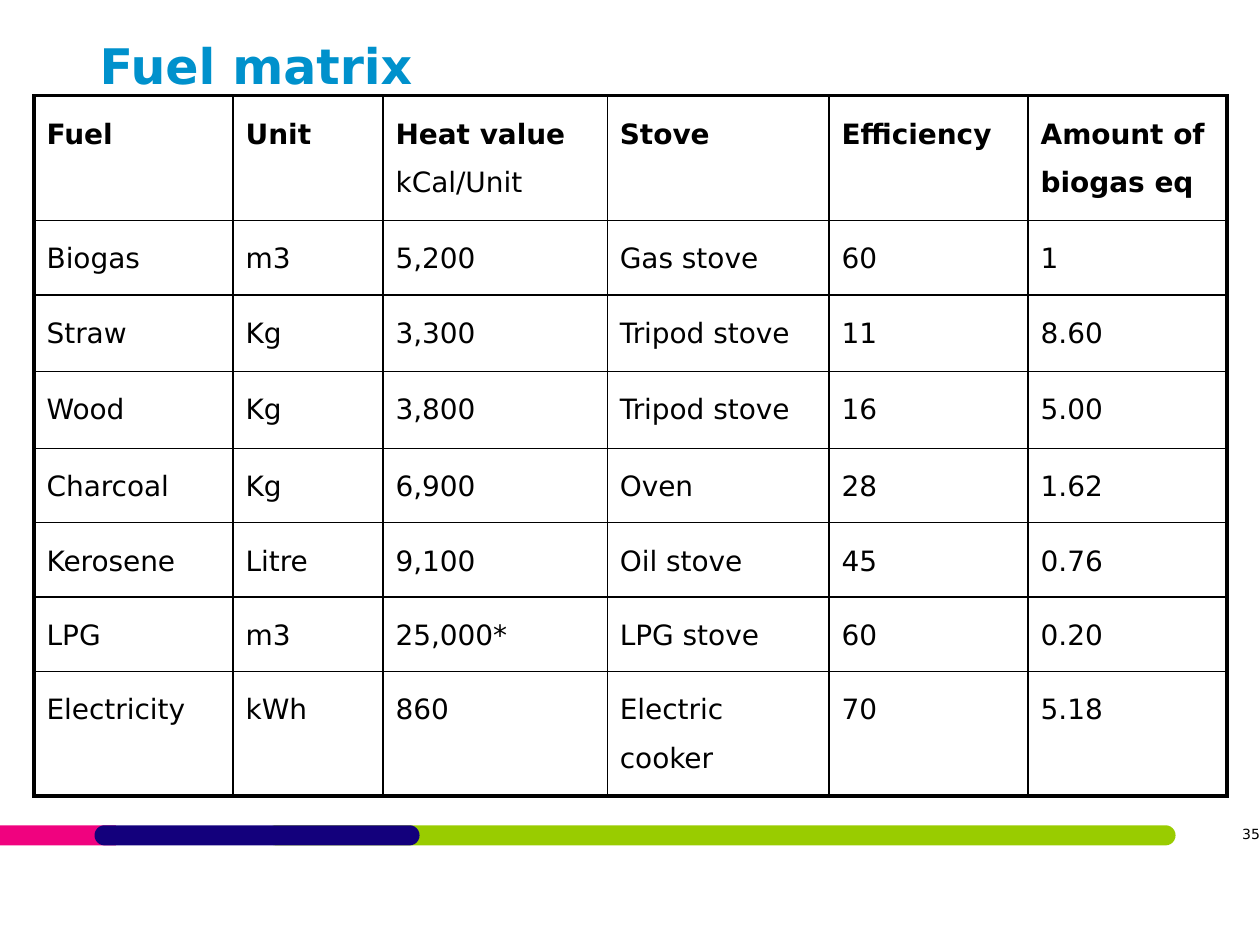
from lxml import etree
from pptx import Presentation, util as u
from pptx.dml.color import RGBColor
from pptx.enum import shapes, text
from pptx.oxml.ns import qn

HEAD = ["Fuel", "Unit", "Heat value |kCal/Unit", "Stove", "Efficiency",
        "Amount of biogas eq"]
FUELS = [
    ["Biogas", "m3", "5,200", "Gas stove", "60", "1"],
    ["Straw", "Kg", "3,300", "Tripod stove", "11", "8.60"],
    ["Wood", "Kg", "3,800", "Tripod stove", "16", "5.00"],
    ["Charcoal", "Kg", "6,900", "Oven", "28", "1.62"],
    ["Kerosene", "Litre", "9,100", "Oil stove", "45", "0.76"],
    ["LPG", "m3", "25,000*", "LPG stove", "60", "0.20"],
    ["Electricity", "kWh", "860", "Electric cooker", "70", "5.18"],
]
WIDTHS = [1.58, 1.19, 1.78, 1.76, 1.58, 1.58]
HEIGHTS = [0.99, 0.59, 0.61, 0.61, 0.59, 0.59, 0.59, 0.99]
BARS = [  # left, width, rounding, colour
    (2.11, 7.22, 0.5, "99CC00"),
    (0, 0.92, 0, "F0027F"),
    (0.75, 2.58, 0.5, "13007C"),
]


def color(code):
    return RGBColor.from_string(code)


def apply(item, vals):
    for key, val in vals.items():
        setattr(item, key, val)


def box(*sides):
    return [u.Inches(side) for side in sides]


def edge(cell, side, width):
    """Draw one black cell border; side is L, R, T or B."""
    line = etree.SubElement(cell._tc.get_or_add_tcPr(), qn(f"a:ln{side}"),
                            w=str(u.Pt(width)))
    fill = etree.SubElement(line, qn("a:solidFill"))
    etree.SubElement(fill, qn("a:srgbClr"), val="000000")


class Deck:
    font = "DejaVu Sans"
    ink = "000000"
    flush = dict.fromkeys(("margin_left", "margin_top", "margin_right",
                           "margin_bottom"), 0)

    def __init__(self, wide, high):
        self.prs = Presentation()
        apply(self.prs, {"slide_width": u.Inches(wide),
                         "slide_height": u.Inches(high)})
        self.slide = self.prs.slides.add_slide(self.prs.slide_layouts[5])

    def run(self, para, words, size, bold=False, ink=ink):
        run = para.add_run()
        run.text = words
        apply(run.font, {"name": self.font, "size": u.Pt(size), "bold": bold})
        run.font.color.rgb = color(ink)

    def bar(self, left, top, width, height, curve, fill):
        bar = self.slide.shapes.add_shape(
            shapes.MSO_SHAPE.ROUNDED_RECTANGLE,
            *box(left, top, width, height))
        bar.adjustments[0] = curve
        bar.shadow.inherit = False
        bar.fill.solid()
        bar.fill.fore_color.rgb = color(fill)
        bar.line.fill.background()

    def title(self, words, *sides):
        title = self.slide.shapes.title
        apply(title, dict(zip(("left", "top", "width", "height"), box(*sides))))
        frame = title.text_frame
        apply(frame, {**self.flush, "word_wrap": False,
                      "auto_size": text.MSO_AUTO_SIZE.NONE,
                      "vertical_anchor": text.MSO_ANCHOR.TOP})
        para = frame.paragraphs[0]
        apply(para, {"alignment": text.PP_ALIGN.LEFT,
                     "line_spacing": u.Pt(36)})
        self.run(para, words, 28, True, "0091CC")

    def number(self, words, *sides):
        frame = self.slide.shapes.add_textbox(*box(*sides)).text_frame
        apply(frame, {**self.flush, "word_wrap": True})
        para = frame.paragraphs[0]
        para.alignment = text.PP_ALIGN.RIGHT
        self.run(para, words, 8)

    def table(self, rows, left, top, widths, heights):
        """Grid with a bold head row; text after a bar in a cell is plain."""
        last, end = len(rows) - 1, len(widths) - 1
        table = self.slide.shapes.add_table(
            len(rows), len(widths),
            *box(left, top, sum(widths), sum(heights))).table
        apply(table, {"first_row": False, "horz_banding": False})
        for col, width in zip(table.columns, widths):
            col.width = u.Inches(width)
        for r, row in enumerate(rows):
            table.rows[r].height = u.Inches(heights[r])
            for c, words in enumerate(row):
                cell = table.cell(r, c)
                outer = {"L": c == 0, "R": c == end,
                         "T": r == 0, "B": r == last}
                for side, thick in outer.items():
                    edge(cell, side, 2.25 if thick else 1)
                cell.fill.background()
                para = cell.text_frame.paragraphs[0]
                para.line_spacing = 1.5
                for i, part in enumerate(words.split("|")):
                    self.run(para, part, 16, r == 0 and i == 0)


def main():
    deck = Deck(10, 7.5)
    for left, width, curve, fill in BARS:
        deck.bar(left, 6.55, width, 0.16, curve, fill)
    deck.title("Fuel matrix", 0.79, 0.25, 8.46, 0.6)
    deck.number("35", 8.33, 6.55, 1.67, 0.21)
    deck.table([HEAD] + FUELS, 0.27, 0.76, WIDTHS, HEIGHTS)
    deck.prs.save("out.pptx")


if __name__ == "__main__":
    main()
